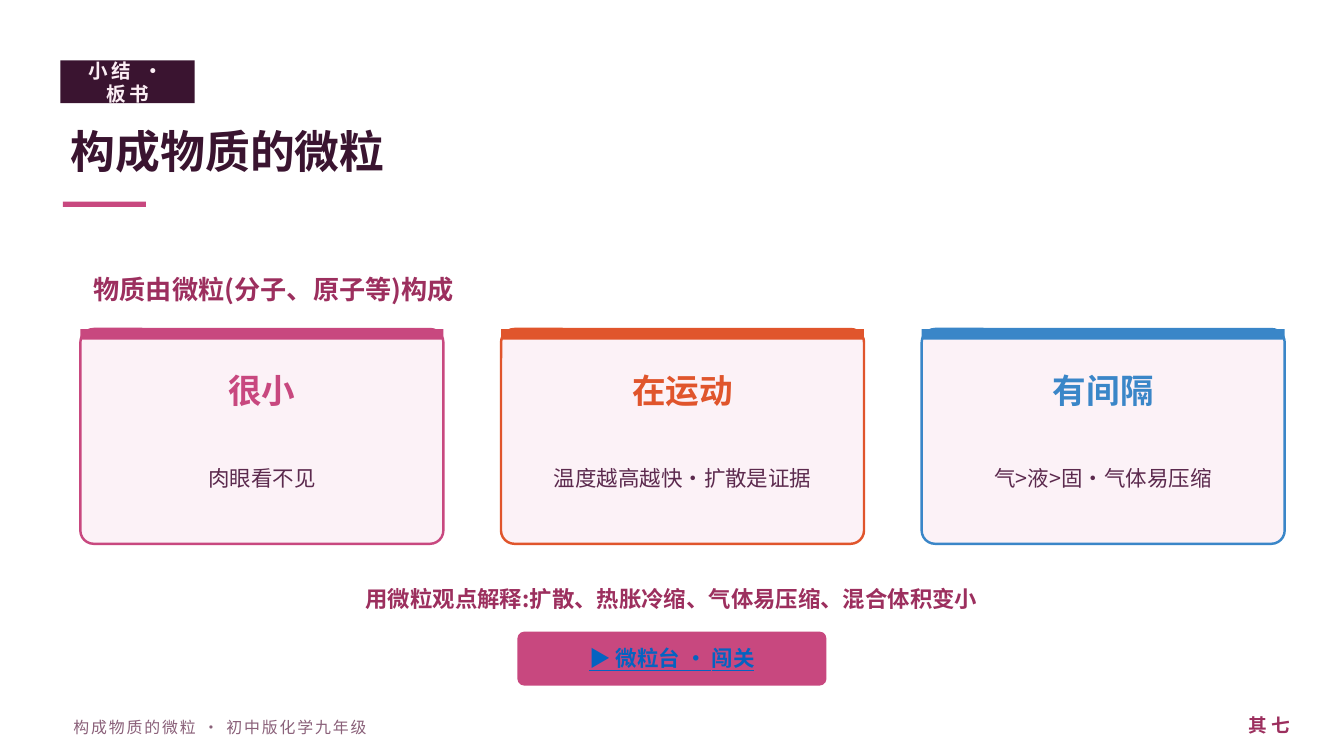
"""Builds the summary slide on the particles that make up matter."""
import pptx
import pptx.dml.color
import pptx.enum.shapes
import pptx.enum.text
import pptx.oxml
import pptx.oxml.ns
import pptx.util

Cm = pptx.util.Cm
Pt = pptx.util.Pt
Align = pptx.enum.text.PP_ALIGN
Shape = pptx.enum.shapes.MSO_SHAPE

PLUM, PINK, BERRY = "3A1430", "C8487F", "9C2F5E"


def colour(hex_code):
    return pptx.dml.color.RGBColor.from_string(hex_code)


class Board:
    font = "Noto Sans CJK SC"

    def __init__(self, slide):
        self.slide = slide

    def block(self, left, top, width, height, fill, line=None, corner=None):
        kind = Shape.RECTANGLE if corner is None else Shape.ROUNDED_RECTANGLE
        block = self.slide.shapes.add_shape(kind, Cm(left), Cm(top), Cm(width), Cm(height))
        block.shadow.inherit = False
        block.fill.solid()
        block.fill.fore_color.rgb = colour(fill)
        if corner is not None:
            block.adjustments[0] = corner
        if line:
            block.line.color.rgb = colour(line)
            block.line.width = Pt(1.3)
        else:
            block.line.fill.background()

    def text(self, left, top, width, height, words, size, ink, bold=True,
             align=Align.LEFT, tracking=0, leading=None, underline=None):
        frame = self.slide.shapes.add_textbox(
            Cm(left), Cm(top), Cm(width), Cm(height)).text_frame
        frame.word_wrap = True
        frame.vertical_anchor = pptx.enum.text.MSO_ANCHOR.MIDDLE
        paragraph = frame.paragraphs[0]
        paragraph.alignment = align
        if leading:
            paragraph.line_spacing = Pt(leading)
        run = paragraph.add_run()
        run.text = words
        run.font.name = self.font
        run.font.size = Pt(size)
        run.font.bold = bold
        run.font.underline = underline
        run.font.color.rgb = colour(ink)
        properties = run.font._element
        east_asian = pptx.oxml.parse_xml(
            f'<a:ea {pptx.oxml.ns.nsdecls("a")} typeface="{self.font}"/>')
        properties.find(pptx.oxml.ns.qn("a:latin")).addnext(east_asian)
        if tracking:
            properties.set("spc", str(tracking * 100))

    def card(self, left, heading, detail, accent):
        top, width = 6.22, 6.86
        self.block(left, top, width, 4.06, "FCF2F7", line=accent, corner=0.062)
        self.block(left, top, width, 0.2, accent)
        self.text(left, 6.81, width, 1.14, heading, 18, accent, align=Align.CENTER)
        self.text(left + 0.38, 8.13, 6.1, 1.78, detail, 11.5, "5C2A4E", bold=False,
                  align=Align.CENTER, leading=15)


def main():
    deck = pptx.Presentation()
    deck.slide_width, deck.slide_height = Cm(25.4), Cm(14.29)
    board = Board(deck.slides.add_slide(deck.slide_layouts[6]))

    board.block(1.14, 1.14, 2.54, 0.81, PLUM)
    board.text(1.14, 1.12, 2.54, 0.86, "小结 · 板书", 10.5, "FBEEF4",
               align=Align.CENTER, tracking=2)
    board.text(1.09, 2.08, 22.86, 1.52, "构成物质的微粒", 24, PLUM)
    board.block(1.19, 3.81, 1.57, 0.1, PINK)
    board.text(1.52, 4.95, 22.86, 1.02, "物质由微粒(分子、原子等)构成", 14, BERRY)

    properties = [
        ("很小", "肉眼看不见", PINK),
        ("在运动", "温度越高越快·扩散是证据", "E0552C"),
        ("有间隔", "气>液>固·气体易压缩", "3A86C8"),
    ]
    for index, (heading, detail, accent) in enumerate(properties):
        board.card(1.52 + index * 7.95, heading, detail, accent)

    board.text(1.52, 10.8, 22.35, 1.02, "用微粒观点解释:扩散、热胀冷缩、气体易压缩、混合体积变小",
               12, BERRY, align=Align.CENTER)
    board.block(9.78, 11.94, 5.84, 1.02, PINK, corner=0.125)
    board.text(9.78, 11.91, 5.84, 1.07, "▶ 微粒台 · 闯关", 11.5, "0563C1",
               align=Align.CENTER, underline=True)
    board.text(1.14, 13.36, 15.75, 0.76, "构成物质的微粒 · 初中版化学九年级", 8.5, "8A6079",
               bold=False, tracking=1)
    board.text(23.11, 13.31, 1.52, 0.81, "其 七", 10, BERRY, align=Align.RIGHT)

    deck.save("out.pptx")


if __name__ == "__main__":
    main()
